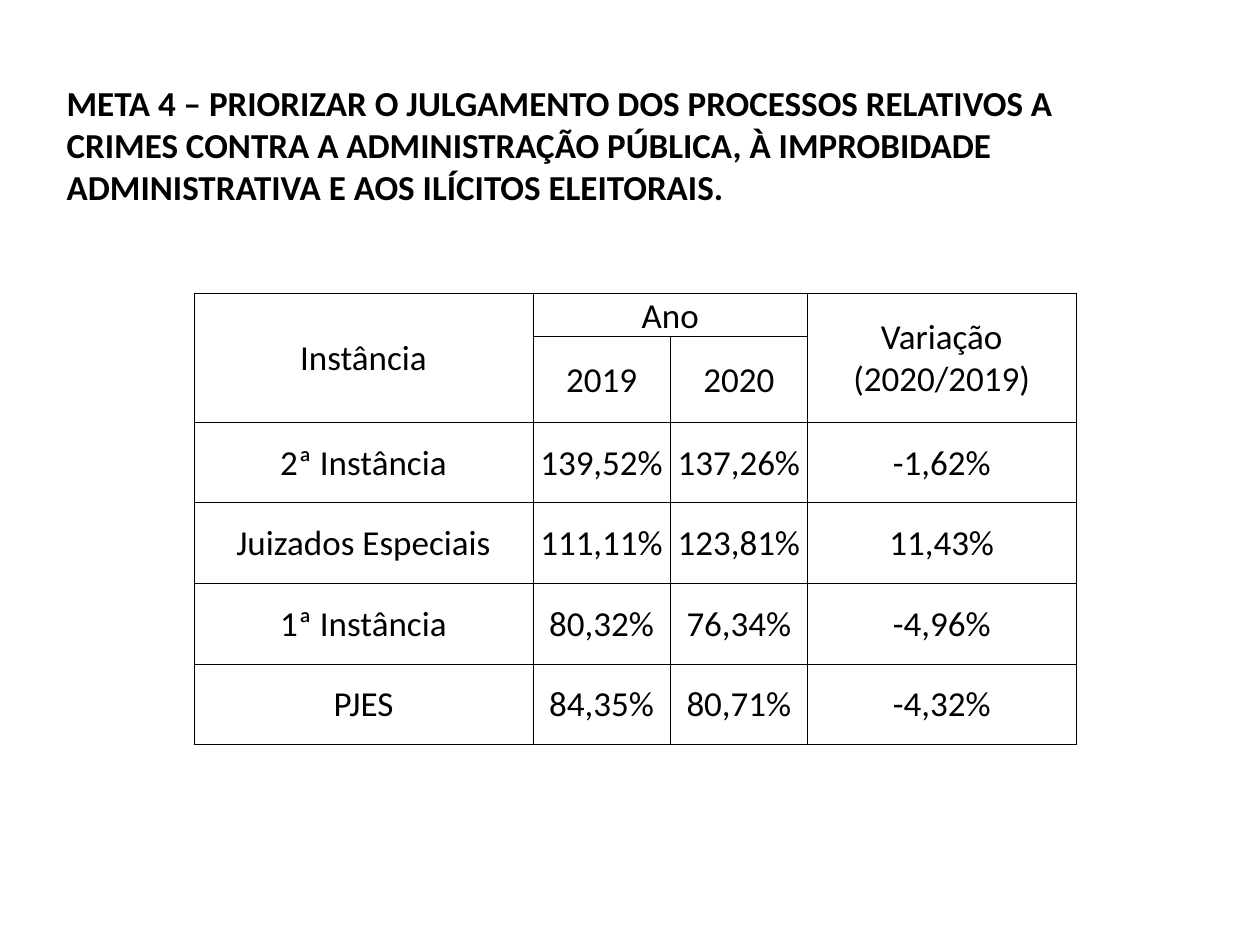
from dataclasses import dataclass

from lxml import etree
from pptx import Presentation
from pptx.dml.color import RGBColor
from pptx.enum import text
from pptx.oxml.ns import qn
from pptx.util import Inches, Pt


@dataclass(frozen=True)
class Theme:
    font: str = "Calibri"
    size: int = 20
    ink: str = "000000"
    border: float = 0.5


@dataclass(frozen=True)
class Entry:
    row: int
    col: int
    label: str
    rows: int = 1
    cols: int = 1


THEME = Theme()
TITLE = (
    "META 4 – PRIORIZAR O JULGAMENTO DOS PROCESSOS RELATIVOS A CRIMES CONTRA "
    "A ADMINISTRAÇÃO PÚBLICA, À IMPROBIDADE ADMINISTRATIVA E AOS ILÍCITOS ELEITORAIS."
)
HEADINGS = [
    Entry(0, 0, "Instância", rows=2),
    Entry(0, 1, "Ano", cols=2),
    Entry(0, 3, "Variação (2020/2019)", rows=2),
    Entry(1, 1, "2019"),
    Entry(1, 2, "2020"),
]
RESULTS = [
    ("2ª Instância", "139,52%", "137,26%", "-1,62%"),
    ("Juizados Especiais", "111,11%", "123,81%", "11,43%"),
    ("1ª Instância", "80,32%", "76,34%", "-4,96%"),
    ("PJES", "84,35%", "80,71%", "-4,32%"),
]
HEADING_ROWS = 2
COLUMN_WIDTHS = (2.69, 1.09, 1.09, 2.13)
ROW_HEIGHTS = (0.33,) * HEADING_ROWS + (0.64,) * len(RESULTS)


def style_paragraph(paragraph, bold: bool = False) -> None:
    font = paragraph.font
    font.name, font.size, font.bold = THEME.font, Pt(THEME.size), bold
    font.color.rgb = RGBColor.from_string(THEME.ink)


def add_title(slide) -> None:
    title = slide.shapes.add_textbox(Inches(0.43), Inches(0.6), Inches(8.35), Inches(1.11))
    frame = title.text_frame
    frame.word_wrap = True
    frame.auto_size = text.MSO_AUTO_SIZE.SHAPE_TO_FIT_TEXT
    frame.text = TITLE
    style_paragraph(frame.paragraphs[0], bold=True)


def format_cell(cell) -> None:
    """Give the cell thin borders on all sides, tight margins and no fill."""
    properties = cell._tc.get_or_add_tcPr()
    for side in ("lnL", "lnR", "lnT", "lnB"):
        line = etree.SubElement(properties, qn(f"a:{side}"), w=str(Pt(THEME.border)))
        fill = etree.SubElement(line, qn("a:solidFill"))
        etree.SubElement(fill, qn("a:srgbClr"), val=THEME.ink)
    cell.fill.background()
    cell.margin_left = cell.margin_right = cell.margin_top = Inches(0.01)
    cell.margin_bottom = 0
    cell.vertical_anchor = text.MSO_ANCHOR.MIDDLE
    style_paragraph(cell.text_frame.paragraphs[0])


def write_entry(table, entry: Entry) -> None:
    cell = table.cell(entry.row, entry.col)
    if entry.rows > 1 or entry.cols > 1:
        cell.merge(table.cell(entry.row + entry.rows - 1, entry.col + entry.cols - 1))
    paragraph = cell.text_frame.paragraphs[0]
    paragraph.add_run().text = entry.label
    paragraph.alignment = text.PP_ALIGN.CENTER


def add_results(slide) -> None:
    table = slide.shapes.add_table(
        len(ROW_HEIGHTS), len(COLUMN_WIDTHS), Inches(1.54), Inches(2.33),
        Inches(sum(COLUMN_WIDTHS)), Inches(sum(ROW_HEIGHTS)),
    ).table
    table.first_row = table.horz_banding = False
    for column, width in zip(table.columns, COLUMN_WIDTHS):
        column.width = Inches(width)
    for row, height in zip(table.rows, ROW_HEIGHTS):
        row.height = Inches(height)
    for cell in table.iter_cells():
        format_cell(cell)
    results = [
        Entry(row, col, label)
        for row, labels in enumerate(RESULTS, HEADING_ROWS)
        for col, label in enumerate(labels)
    ]
    for entry in HEADINGS + results:
        write_entry(table, entry)


def main() -> None:
    deck = Presentation()
    deck.slide_width, deck.slide_height = Inches(10), Inches(7.5)
    slide = deck.slides.add_slide(deck.slide_layouts[6])
    add_title(slide)
    add_results(slide)
    deck.save("out.pptx")


if __name__ == "__main__":
    main()
